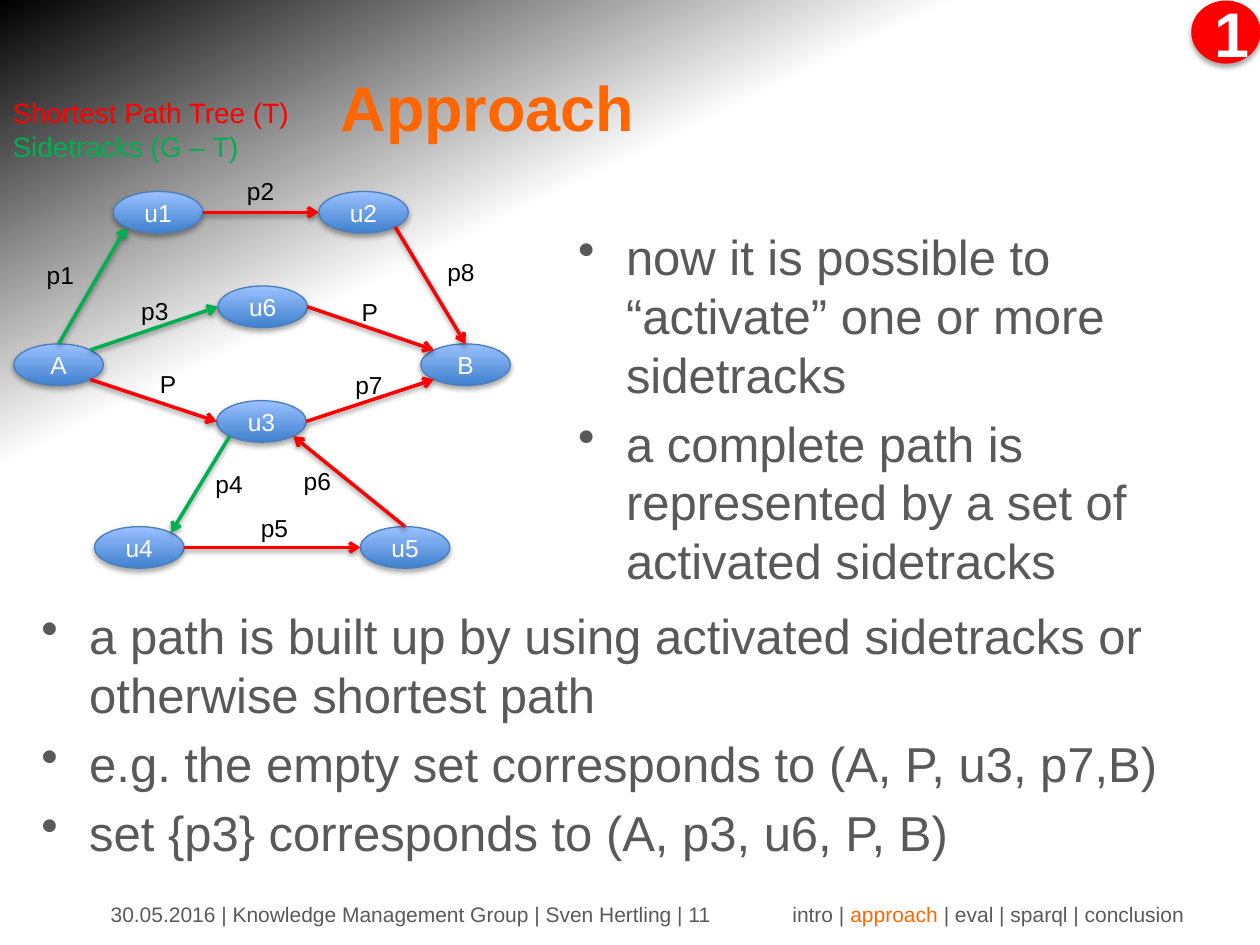
"""Build the Approach slide: a path graph with its sidetracks, and bullets."""
from copy import deepcopy

from pptx import Presentation
from pptx.dml.color import RGBColor
from pptx.enum.shapes import MSO_CONNECTOR, MSO_SHAPE
from pptx.enum.text import MSO_ANCHOR as ANCHOR, PP_ALIGN as ALIGN
from pptx.oxml import parse_xml
from pptx.oxml.ns import nsdecls
from pptx.oxml.xmlchemy import OxmlElement
from pptx.util import Inches, Pt

RED = RGBColor(0xFF, 0x00, 0x00)
GREEN = RGBColor(0x00, 0xB0, 0x50)
ORANGE = RGBColor(0xFF, 0x66, 0x00)
GREY = RGBColor(0x59, 0x59, 0x59)
BLACK = RGBColor(0x00, 0x00, 0x00)
WHITE = RGBColor(0xFF, 0xFF, 0xFF)
NODE_DARK = RGBColor(0x3F, 0x80, 0xCD)
NODE_LIGHT = RGBColor(0x9B, 0xC1, 0xFF)
NODE_LINE = RGBColor(0x4B, 0x7E, 0xBC)

prs = Presentation()
prs.slide_width, prs.slide_height = Inches(10), Inches(7.5)
COL, ROW = prs.slide_width / 100, prs.slide_height / 75


def write(sp, *paras, size=14, color=BLACK, bold=False, align=ALIGN.LEFT,
          anchor=ANCHOR.TOP, inset=(0.1, 0.05), bullet=False, wrap=True):
    """Fill a shape with paragraphs, each a string or a list of (text, colour)."""
    tf = sp.text_frame
    tf.word_wrap, tf.vertical_anchor = wrap, anchor
    tf.margin_left = tf.margin_right = Inches(inset[0])
    tf.margin_top = tf.margin_bottom = Inches(inset[1])
    for i, runs in enumerate(paras):
        p = tf.add_paragraph() if i else tf.paragraphs[0]
        p.alignment = align
        if bullet:
            if i:
                p.space_before = Pt(size * 0.2)
            pPr = p._p.get_or_add_pPr()
            pPr.set("marL", str(Inches(0.38)))
            pPr.set("indent", str(Inches(-0.38)))
            bu = OxmlElement("a:buChar")
            bu.set("char", "•")
            pPr.append(bu)
        for text, tint in [(runs, color)] if isinstance(runs, str) else runs:
            r = p.add_run()
            r.text = text
            r.font.name, r.font.size, r.font.bold = "Arial", Pt(size), bold
            r.font.color.rgb = tint


def add_shadow(sp, alpha, dist):
    """Give a shape or connector a soft shadow straight below it."""
    sp._element.spPr.append(parse_xml(
        f'<a:effectLst {nsdecls("a")}><a:outerShdw blurRad="{Pt(3.1)}" dist="{Pt(dist)}" '
        f'dir="5400000" rotWithShape="0"><a:srgbClr val="000000"><a:alpha val="{alpha}000"/>'
        '</a:srgbClr></a:outerShdw></a:effectLst>'))


s = prs.slides.add_slide(prs.slide_layouts[5])

fill = s.background.fill
fill.gradient()
fill.gradient_angle = 360 - 244
first, last = fill.gradient_stops
first.color.rgb, last.color.rgb = WHITE, BLACK
middle = deepcopy(first._gs)
middle.set("pos", "70000")
first._gs.addnext(middle)
alpha = OxmlElement("a:alpha")
alpha.set("val", "41000")
last._gs[0].append(alpha)

title = s.shapes.title
title.left, title.top = int(5 * COL), int(3.3 * ROW)
title.width, title.height = int(67.4 * COL), int(10.3 * ROW)
write(title, "Approach", size=36, color=ORANGE, bold=True,
      align=ALIGN.CENTER, anchor=ANCHOR.MIDDLE)

badge = s.shapes.add_shape(MSO_SHAPE.OVAL, int(94.6 * COL), int(0.1 * ROW),
                           int(5.4 * COL), int(4.9 * ROW))
badge.fill.solid()
badge.fill.fore_color.rgb = badge.line.color.rgb = RED
badge.line.width = Pt(0.75)
add_shadow(badge, 35, 1.8)
write(badge, "1", size=36, color=WHITE, bold=True,
      align=ALIGN.CENTER, anchor=ANCHOR.MIDDLE)

graph = s.shapes.add_group_shape().shapes
NODE_W, NODE_H = 7.1, 3.3
nodes = {"A": (1.1, 27.3), "u6": (17.3, 22.7), "u3": (17.2, 31.8), "u1": (9, 15.2),
         "u2": (25.3, 15.2), "B": (33.4, 27.3), "u4": (7.5, 41.8), "u5": (28.6, 41.8)}
for name, (x, y) in nodes.items():
    sp = graph.add_shape(MSO_SHAPE.OVAL, int(x * COL), int(y * ROW),
                         int(NODE_W * COL), int(NODE_H * ROW))
    sp.fill.gradient()
    sp.fill.gradient_angle = 90
    for stop, tint in zip(sp.fill.gradient_stops, (NODE_DARK, NODE_LIGHT)):
        stop.color.rgb = tint
    sp.line.color.rgb, sp.line.width = NODE_LINE, Pt(0.75)
    add_shadow(sp, 35, 1.8)
    write(sp, name, color=WHITE, align=ALIGN.CENTER, anchor=ANCHOR.MIDDLE,
          inset=(0.14, 0.07), wrap=False)

D = 0.71
sites = {"N": (0, -1), "E": (1, 0), "W": (-1, 0), "NE": (D, -D), "NW": (-D, -D),
         "SE": (D, D), "SW": (-D, D)}
edges = [("A", "N", "u1", "SW", GREEN), ("A", "NE", "u6", "W", GREEN),
         ("A", "SE", "u3", "W", RED), ("u6", "E", "B", "NW", RED),
         ("u3", "E", "B", "SW", RED), ("u4", "E", "u5", "W", RED),
         ("u5", "N", "u3", "SE", RED), ("u1", "E", "u2", "W", RED),
         ("u2", "SE", "B", "N", RED), ("u3", "SW", "u4", "NE", GREEN)]
for start, start_site, end, end_site, tint in edges:
    ends = []
    for node, site in ((start, start_site), (end, end_site)):
        (x, y), (dx, dy) = nodes[node], sites[site]
        ends += [int((x + NODE_W / 2 * (1 + dx)) * COL),
                 int((y + NODE_H / 2 * (1 + dy)) * ROW)]
    edge = graph.add_connector(MSO_CONNECTOR.STRAIGHT, *ends)
    edge.line.color.rgb, edge.line.width = tint, Pt(2)
    arrow = OxmlElement("a:tailEnd")
    arrow.set("type", "arrow")
    edge.line._get_or_add_ln().append(arrow)
    add_shadow(edge, 38, 1.6)

labels = [("p1", 2.3, 19.9, 5.9), ("p2", 18.2, 13.3, 6.9), ("p3", 9.8, 22.8, 6.2),
          ("P", 11.3, 28.6, 4.7), ("p5", 19.3, 40, 6.4), ("p6", 22.7, 36.3, 6.1),
          ("p7", 26.8, 28.7, 6.6), ("p8", 34.1, 19.7, 6.3), ("P", 27.3, 22.9, 4.7),
          ("p4", 15.7, 36.5, 5.8)]
for text, x, y, w in labels:
    sp = graph.add_textbox(int(x * COL), int(y * ROW), int(w * COL), int(3.8 * ROW))
    write(sp, text, inset=(0.14, 0.07))

legend = graph.add_textbox(int(-0.4 * COL), int(6.9 * ROW), int(25.1 * COL), int(6.8 * ROW))
write(legend, [("Shortest Path Tree (T)", RED)], [("Sidetracks (G – T)", GREEN)],
      size=16, inset=(0.14, 0.07))

bullets = [
    (44.9, 17.5, 55.1, 30.2, ["now it is possible to “activate” one or more sidetracks",
                              "a complete path is represented by a set of activated sidetracks"]),
    (2.3, 47.6, 95.8, 21.7, ["a path is built up by using activated sidetracks or "
                             "otherwise shortest path",
                             "e.g. the empty set corresponds to (A, P, u3, p7,B)",
                             "set {p3} corresponds to (A, p3, u6, P, B)"])]
for x, y, w, h, paras in bullets:
    sp = s.shapes.add_textbox(int(x * COL), int(y * ROW), int(w * COL), int(h * ROW))
    write(sp, *paras, size=28, color=GREY, bullet=True)

footers = [(7.8, 54.6, "30.05.2016 | Knowledge Management Group | Sven Hertling | 11"),
           (61.9, 33.8, [("intro | ", GREY), ("approach ", ORANGE),
                         ("| eval | sparql | conclusion", GREY)])]
for x, w, runs in footers:
    sp = s.shapes.add_textbox(int(x * COL), int(70.9 * ROW), int(w * COL), int(3.3 * ROW))
    write(sp, runs, size=12, color=GREY, anchor=ANCHOR.MIDDLE)

prs.save("out.pptx")
